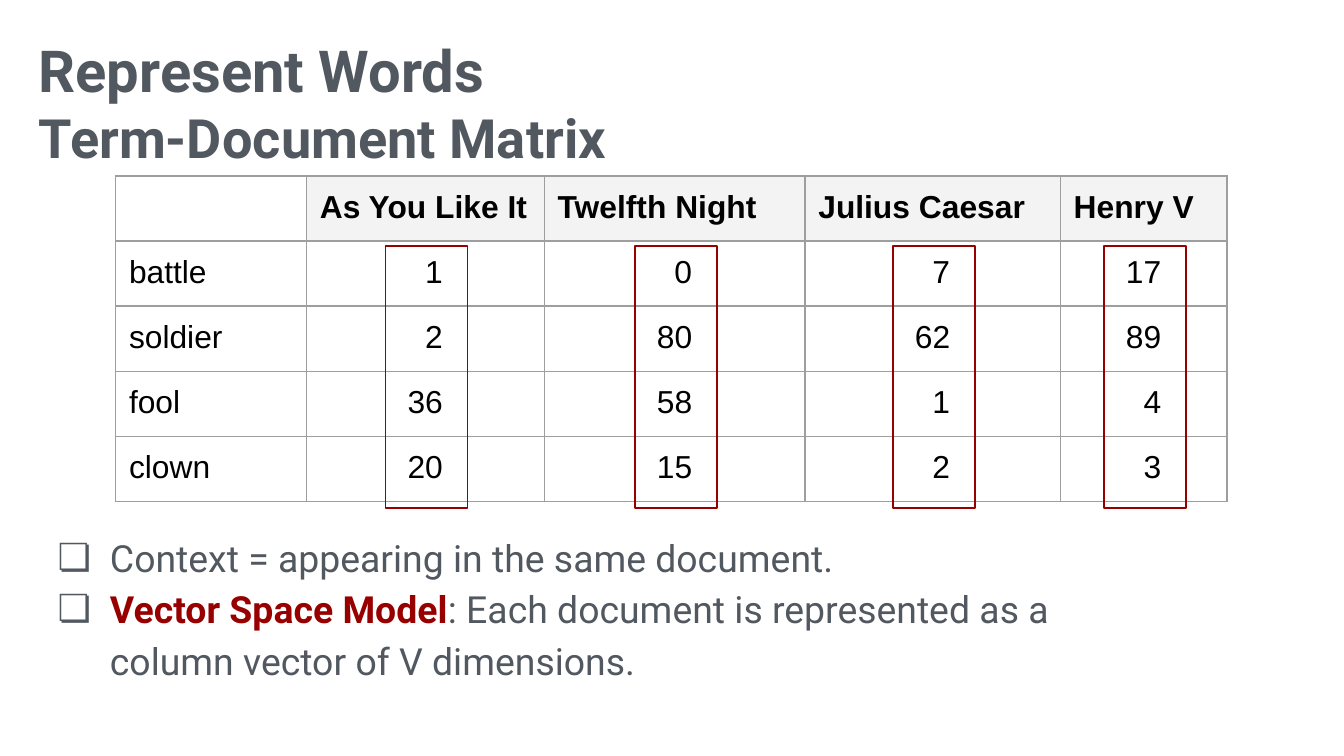
from lxml import etree
from pptx import Presentation
from pptx.dml.color import RGBColor
from pptx.enum import shapes, text
from pptx.oxml import ns
from pptx.util import Inches, Pt

SLATE = RGBColor(0x52, 0x58, 0x60)
DARK_RED = RGBColor(0x98, 0x00, 0x00)
BLACK = RGBColor(0x00, 0x00, 0x00)
HEADER_GRAY = RGBColor(0xF3, 0xF3, 0xF3)
BORDER_GRAY = RGBColor(0x9E, 0x9E, 0x9E)

TABLE_LEFT, TABLE_TOP, ROW_HEIGHT = 0.86, 1.31, 0.48
COLUMN_WIDTHS = [1.42, 1.77, 1.94, 1.9, 1.24]
DIGIT_WIDTH = 0.13
BODY_SIZE = 20
MATRIX = [
    ["", "As You Like It", "Twelfth Night", "Julius Caesar", "Henry V"],
    ["battle", "1", "0", "7", "17"],
    ["soldier", "2", "80", "62", "89"],
    ["fool", "36", "58", "1", "4"],
    ["clown", "20", "15", "2", "3"],
]
BULLETS = [
    [("Context = appearing in the same document.", False)],
    [("Vector Space Model", True),
     (": Each document is represented as a column vector of V dimensions.", False)],
]


def add_child(parent, tag, **attributes):
    return etree.SubElement(parent, ns.qn(tag), attributes)


def set_font(font, name, size, color, bold=False):
    font.name, font.size, font.bold = name, Pt(size), bold
    font.color.rgb = color


def add_text_frame(slide, left, top, width, height, margin):
    box = slide.shapes.add_textbox(Inches(left), Inches(top), Inches(width), Inches(height))
    frame = box.text_frame
    frame.word_wrap = True
    frame.margin_left = frame.margin_right = Inches(margin)
    frame.margin_top = frame.margin_bottom = Inches(margin)
    return frame


def add_title(slide):
    frame = add_text_frame(slide, 0.23, 0.2, 9.53, 0.49, 0.06)
    paragraph = frame.paragraphs[0]
    first = paragraph.add_run()
    first.text = "Represent Words"
    paragraph.add_line_break()
    second = paragraph.add_run()
    second.text = "Term-Document Matrix"
    set_font(first.font, "Roboto", 31, SLATE, True)
    set_font(second.font, "Roboto", 29, SLATE, True)


def add_borders(cell):
    properties = cell._tc.get_or_add_tcPr()
    for side in ("a:lnL", "a:lnR", "a:lnT", "a:lnB"):
        line = add_child(properties, side, w=str(Pt(0.75)))
        fill = add_child(line, "a:solidFill")
        add_child(fill, "a:srgbClr", val=str(BORDER_GRAY))


def fill_cell(cell, value, is_header, is_count):
    add_borders(cell)
    if is_header and value:
        cell.fill.solid()
        cell.fill.fore_color.rgb = HEADER_GRAY
    else:
        cell.fill.background()
    if not value:
        return
    cell.margin_left = cell.margin_right = Inches(0.1)
    cell.margin_top = cell.margin_bottom = Inches(0.1)
    paragraph = cell.text_frame.paragraphs[0]
    paragraph.text = value
    set_font(paragraph.font, "Arial", 17, BLACK, is_header)
    if is_count:
        paragraph.alignment = text.PP_ALIGN.CENTER
        # Line up single digits with the units of two-digit counts.
        cell.margin_left = Inches(0.1 + DIGIT_WIDTH * (2 - len(value)))


def add_matrix(slide):
    table = slide.shapes.add_table(
        len(MATRIX), len(COLUMN_WIDTHS), Inches(TABLE_LEFT), Inches(TABLE_TOP),
        Inches(sum(COLUMN_WIDTHS)), Inches(ROW_HEIGHT * len(MATRIX))).table
    table.first_row = table.horz_banding = False
    for column, width in zip(table.columns, COLUMN_WIDTHS):
        column.width = Inches(width)
    for i, values in enumerate(MATRIX):
        table.rows[i].height = Inches(ROW_HEIGHT)
        for j, value in enumerate(values):
            fill_cell(table.cell(i, j), value, i == 0, i > 0 and j > 0)


def add_vector_frames(slide):
    """Outline the counts of each document as a column vector."""
    width = 0.61
    for j in range(1, len(COLUMN_WIDTHS)):
        center = TABLE_LEFT + sum(COLUMN_WIDTHS[:j]) + COLUMN_WIDTHS[j] / 2 + 0.01
        frame = slide.shapes.add_shape(
            shapes.MSO_SHAPE.RECTANGLE, Inches(center - width / 2), Inches(1.83),
            Inches(width), Inches(1.95))
        frame.shadow.inherit = False
        frame.fill.background()
        frame.line.color.rgb = DARK_RED
        frame.line.width = Pt(0.75)


def add_bullet(paragraph):
    properties = paragraph._p.get_or_add_pPr()
    properties.set("marL", str(Inches(0.5)))
    properties.set("indent", str(Inches(-0.39)))
    color = add_child(properties, "a:buClr")
    add_child(color, "a:srgbClr", val=str(SLATE))
    add_child(properties, "a:buSzPts", val=str(BODY_SIZE * 100))
    add_child(properties, "a:buFont", typeface="Roboto")
    add_child(properties, "a:buChar", char="❏")


def add_bullets(slide):
    frame = add_text_frame(slide, 0.22, 3.83, 8.27, 1.31, 0.1)
    frame.auto_size = text.MSO_AUTO_SIZE.SHAPE_TO_FIT_TEXT
    for i, parts in enumerate(BULLETS):
        paragraph = frame.add_paragraph() if i else frame.paragraphs[0]
        paragraph.line_spacing = 1.15
        add_bullet(paragraph)
        for words, is_key in parts:
            run = paragraph.add_run()
            run.text = words
            set_font(run.font, "Roboto", BODY_SIZE, DARK_RED if is_key else SLATE, is_key)


def main():
    presentation = Presentation()
    presentation.slide_width = Inches(10)
    presentation.slide_height = presentation.slide_width * 9 // 16
    slide = presentation.slides.add_slide(presentation.slide_layouts[6])
    add_title(slide)
    add_matrix(slide)
    add_bullets(slide)
    add_vector_frames(slide)
    presentation.save("out.pptx")


if __name__ == "__main__":
    main()
